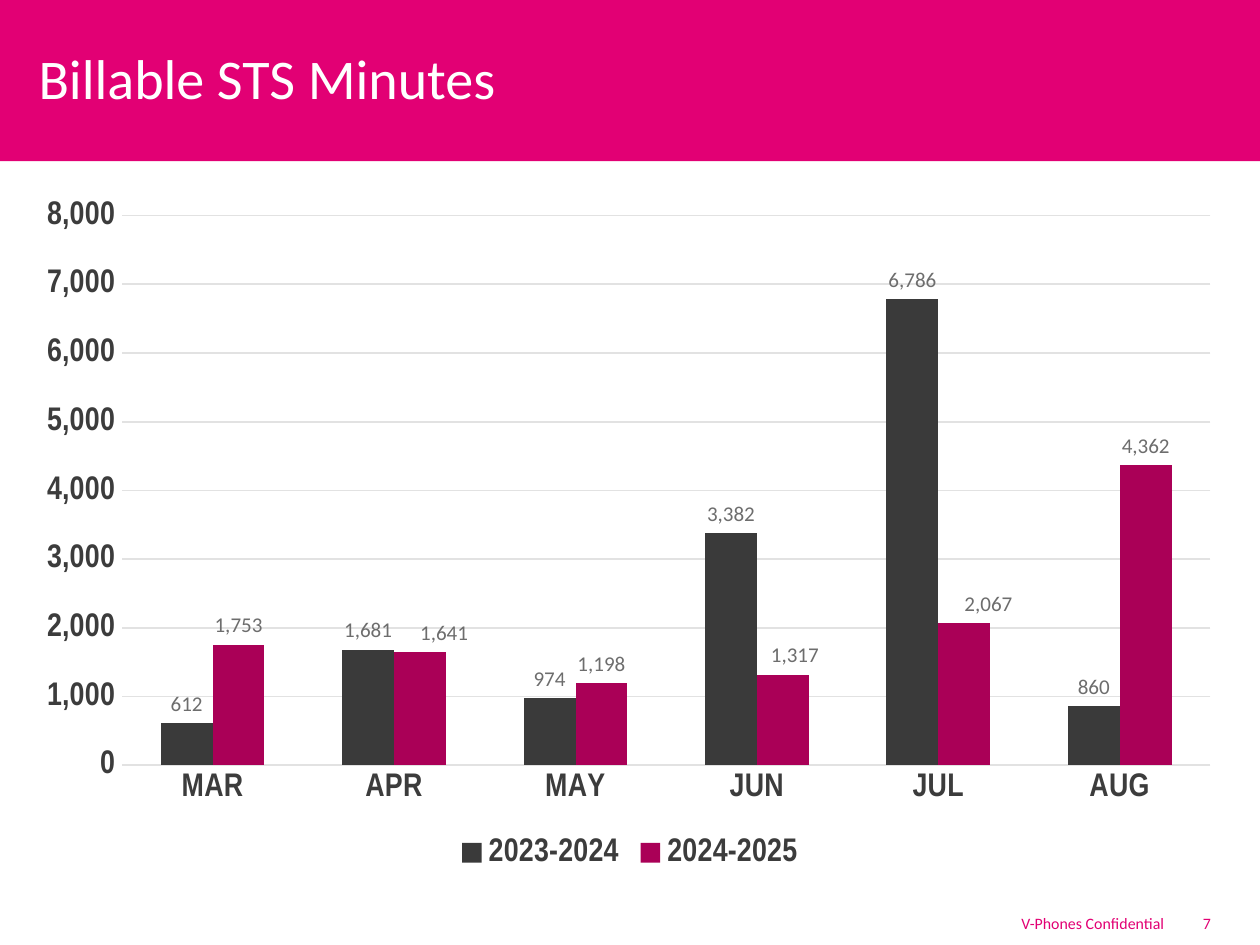
from lxml import etree
from pptx import Presentation
from pptx.chart.data import CategoryChartData
from pptx.dml.color import RGBColor
from pptx.enum.chart import XL_CHART_TYPE, XL_LABEL_POSITION, XL_LEGEND_POSITION, XL_TICK_MARK
from pptx.enum.shapes import MSO_SHAPE
from pptx.enum.text import MSO_ANCHOR, PP_ALIGN
from pptx.oxml.ns import qn
from pptx.util import Inches, Pt

CLUSTERED = XL_CHART_TYPE.COLUMN_CLUSTERED
OUTSIDE_END = XL_LABEL_POSITION.OUTSIDE_END
LEGEND_BOTTOM = XL_LEGEND_POSITION.BOTTOM
NO_TICK = XL_TICK_MARK.NONE
RECTANGLE = MSO_SHAPE.RECTANGLE
MIDDLE = MSO_ANCHOR.MIDDLE
LEFT, RIGHT = PP_ALIGN.LEFT, PP_ALIGN.RIGHT

SLIDE_WIDTH = 7.5
SLIDE_HEIGHT = SLIDE_WIDTH * 3 / 4
MAGENTA, WHITE, DARK_GRAY = "E20074", "FFFFFF", "3C3C3C"
LABEL_GRAY, GRID_GRAY = "6D6D6D", "E2E2E2"
NUMBER_FORMAT = "#,##0"
MONTHS = ["MAR", "APR", "MAY", "JUN", "JUL", "AUG"]
YEARS = [
    ("2023-2024", "3A3A3A", [612, 1681, 974, 3382, 6786, 860]),
    ("2024-2025", "AA0057", [1753, 1641, 1198, 1317, 2067, 4362]),
]
# Month index: label shift as a fraction of the chart's width
LABEL_SHIFTS = {1: 0.02, 3: 0.01, 4: 0.02}


def color(value):
    return RGBColor.from_string(value)


def style_font(font, size, value, name="Calibri", bold=False):
    font.size, font.name, font.bold = Pt(size), name, bold
    font.color.rgb = color(value)


def add_text(slide, box, text, size, value, margins, alignment=LEFT):
    text_box = slide.shapes.add_textbox(*map(Inches, box))
    frame = text_box.text_frame
    frame.word_wrap = True
    frame.vertical_anchor = MIDDLE
    frame.margin_left = frame.margin_right = Inches(margins[0])
    frame.margin_top = frame.margin_bottom = Inches(margins[1])
    frame.text = text
    paragraph = frame.paragraphs[0]
    paragraph.alignment = alignment
    style_font(paragraph.runs[0].font, size, value)


def add_header(slide, box, title):
    left, top, width, height = box
    band = slide.shapes.add_shape(RECTANGLE, *map(Inches, box))
    band.shadow.inherit = False
    band.fill.solid()
    band.fill.fore_color.rgb = color(MAGENTA)
    band.line.fill.background()
    title_box = (left + 0.15, top + 0.16, width - 0.26, 0.6)
    add_text(slide, title_box, title, 24, WHITE, (0.08, 0.04))


def add_footer(slide, box, notice, number):
    left, top, width, height = box
    margins = (0.06, 0.03)
    number_left = left + width - 0.38
    add_text(slide, (left, top, 2.38, height), notice, 6.8, MAGENTA, margins, RIGHT)
    add_text(slide, (number_left, top, 0.38, height), number, 6.8, MAGENTA, margins)


def set_manual_layout(layout, **settings):
    """Fill a chart layout element with manual positions in schema order."""
    manual = etree.SubElement(layout, qn("c:manualLayout"))
    for name, value in settings.items():
        etree.SubElement(manual, qn("c:" + name)).set("val", str(value))


def style_axis(axis):
    axis.major_tick_mark = axis.minor_tick_mark = NO_TICK
    axis.format.line.fill.background()
    style_font(axis.tick_labels.font, 14, DARK_GRAY, "Arial Narrow", True)


def style_labels(series):
    labels = series.data_labels
    labels.show_value = True
    labels.number_format = NUMBER_FORMAT
    labels.number_format_is_linked = False
    labels.position = OUTSIDE_END
    style_font(labels.font, 9, LABEL_GRAY)


def shift_labels(series, shifts):
    for index in shifts:
        label = series.points[index].data_label
        style_font(label.font, 9, LABEL_GRAY)
        label.position = OUTSIDE_END
    for element in series.data_labels._element.findall(qn("c:dLbl")):
        index_element = element.find(qn("c:idx"))
        layout = etree.Element(qn("c:layout"))
        index_element.addnext(layout)
        set_manual_layout(layout, x=shifts[int(index_element.get("val"))], y=0)


def add_minutes_chart(slide, box):
    data = CategoryChartData(number_format=NUMBER_FORMAT)
    data.categories = MONTHS
    for name, _, values in YEARS:
        data.add_series(name, values)
    chart = slide.shapes.add_chart(CLUSTERED, *map(Inches, box), data).chart
    chart.has_title = False
    style_font(chart.font, 10, DARK_GRAY)

    chart.has_legend = True
    chart.legend.position = LEGEND_BOTTOM
    chart.legend.include_in_layout = False
    style_font(chart.legend.font, 14, DARK_GRAY, "Arial Narrow", True)

    style_axis(chart.category_axis)
    value_axis = chart.value_axis
    style_axis(value_axis)
    value_axis.minimum_scale, value_axis.maximum_scale = 0, 8000
    value_axis.major_unit = 1000
    value_axis.tick_labels.number_format = NUMBER_FORMAT
    value_axis.tick_labels.number_format_is_linked = False
    grid_line = value_axis.major_gridlines.format.line
    grid_line.color.rgb = color(GRID_GRAY)
    grid_line.width = Pt(0.75)

    plot = chart.plots[0]
    plot.gap_width, plot.overlap = 150, 0
    plot.vary_by_categories = False
    for series, (_, fill, _) in zip(plot.series, YEARS):
        series.format.fill.solid()
        series.format.fill.fore_color.rgb = color(fill)
        style_labels(series)
    shift_labels(plot.series[1], LABEL_SHIFTS)

    plot_area = chart._chartSpace.find(".//" + qn("c:plotArea"))
    layout = plot_area.find(qn("c:layout"))
    if layout is None:
        layout = etree.Element(qn("c:layout"))
        plot_area.insert(0, layout)
    set_manual_layout(layout, layoutTarget="inner", xMode="edge", yMode="edge",
                      x=0.08, y=0.04, w=0.9, h=0.8)


def main():
    presentation = Presentation()
    presentation.slide_width = Inches(SLIDE_WIDTH)
    presentation.slide_height = Inches(SLIDE_HEIGHT)
    slide = presentation.slides.add_slide(presentation.slide_layouts[6])
    add_header(slide, (0, 0, SLIDE_WIDTH, 0.96), "Billable STS Minutes")
    add_minutes_chart(slide, (0.15, 1.12, 7.2, 4.09))
    add_footer(slide, (4.61, 5.41, 2.87, 0.17), "V-Phones Confidential", "7")
    presentation.save("out.pptx")


if __name__ == "__main__":
    main()
